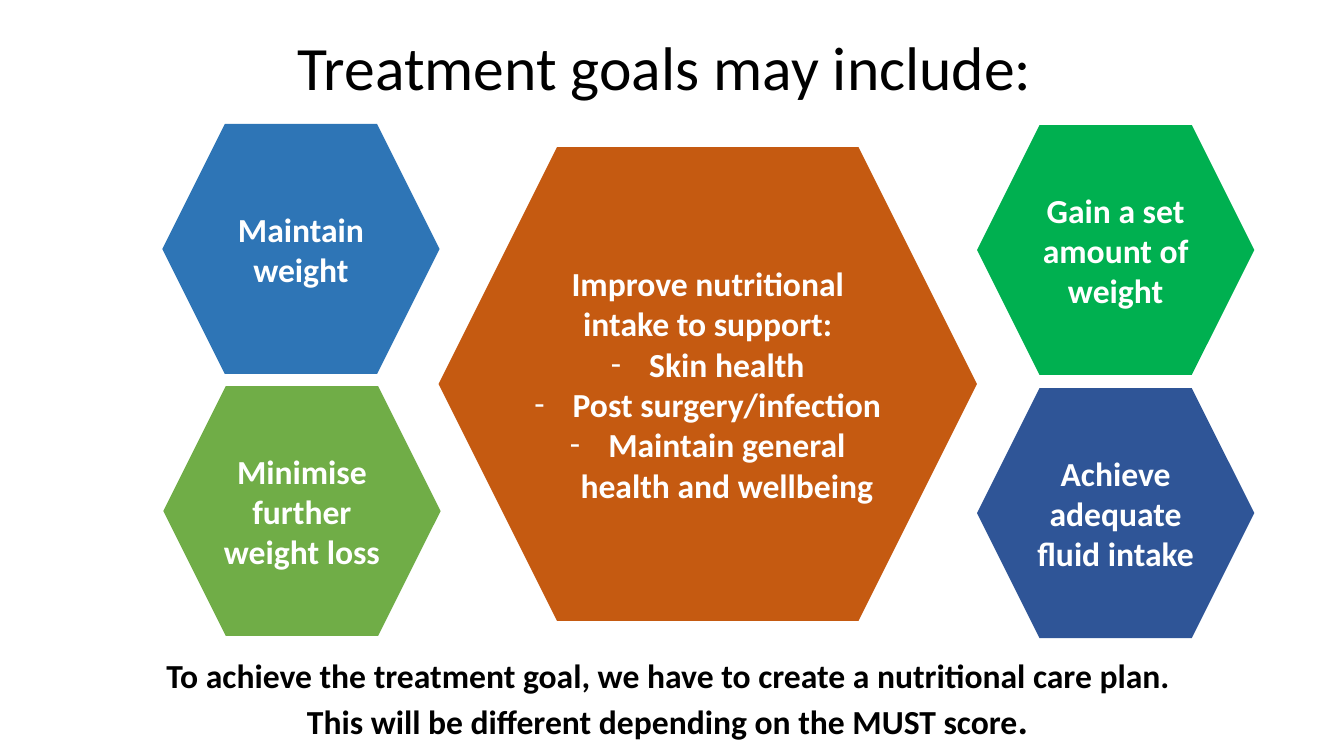
from pptx import Presentation
from pptx.dml.color import RGBColor
from pptx.enum.shapes import MSO_SHAPE
from pptx.enum.text import MSO_ANCHOR, MSO_AUTO_SIZE, PP_ALIGN
from pptx.oxml.ns import qn
from pptx.util import Inches, Pt
from lxml.etree import SubElement

BLACK = RGBColor(0x00, 0x00, 0x00)
WHITE = RGBColor(0xFF, 0xFF, 0xFF)
GREEN = RGBColor(0x00, 0xB0, 0x50)
NAVY = RGBColor(0x2F, 0x55, 0x97)
LEAF = RGBColor(0x70, 0xAD, 0x47)
ORANGE = RGBColor(0xC5, 0x5A, 0x11)
BLUE = RGBColor(0x2E, 0x75, 0xB6)


def write(paragraph, text, size=24, color=WHITE, bold=True, bullet=None):
    """Add a centred run, with a hanging bullet if one is given."""
    paragraph.alignment = PP_ALIGN.CENTER
    if bullet:
        properties = paragraph._p.get_or_add_pPr()
        properties.set("marL", str(Inches(0.38)))
        properties.set("indent", str(-Inches(0.38)))
        SubElement(properties, qn("a:buFont")).set("typeface", "Calibri")
        SubElement(properties, qn("a:buChar")).set("char", bullet)
    run = paragraph.add_run()
    run.text = text
    run.font.name = "Calibri"
    run.font.size = Pt(size)
    run.font.bold = bold
    run.font.color.rgb = color


def add_hexagon(left, top, width, height, fill):
    """Draw a hexagon and return its text frame."""
    shape = slide.shapes.add_shape(
        MSO_SHAPE.HEXAGON, Inches(left), Inches(top), Inches(width), Inches(height))
    shape.shadow.inherit = False
    shape.fill.solid()
    shape.fill.fore_color.rgb = fill
    shape.line.fill.background()
    shape.text_frame.word_wrap = True
    shape.text_frame.vertical_anchor = MSO_ANCHOR.MIDDLE
    return shape.text_frame


presentation = Presentation()
presentation.slide_width = Inches(13.33)
presentation.slide_height = Inches(7.5)
slide = presentation.slides.add_slide(presentation.slide_layouts[5])

# Title
title = slide.shapes.title
title.left, title.top = Inches(0), Inches(0.12)
title.width, title.height = Inches(13.33), Inches(1.15)
title.text_frame.vertical_anchor = MSO_ANCHOR.MIDDLE
heading = title.text_frame.paragraphs[0]
heading.line_spacing = 0.9
write(heading, "Treatment goals may include: ", size=44, color=BLACK, bold=False)

# Closing message
message = slide.shapes.add_textbox(Inches(0), Inches(6.45), Inches(13.33), Inches(0.98))
message_frame = message.text_frame
message_frame.word_wrap = True
message_frame.auto_size = MSO_AUTO_SIZE.SHAPE_TO_FIT_TEXT
write(message_frame.paragraphs[0],
      "To achieve the treatment goal, we have to create a nutritional care plan. ",
      color=BLACK)
last_line = message_frame.add_paragraph()
write(last_line, "This will be different depending on the MUST score", color=BLACK)
write(last_line, ". ", size=28, color=BLACK)

# Outer goals
outer_goals = [
    (9.69, 1.24, GREEN, "Gain a set amount of weight"),
    (9.69, 3.85, NAVY, "Achieve adequate fluid intake"),
    (1.62, 3.83, LEAF, "Minimise further weight loss"),
    (1.61, 1.23, BLUE, "Maintain weight"),
]
for left, top, fill, goal in outer_goals:
    write(add_hexagon(left, top, 2.75, 2.48, fill).paragraphs[0], goal)

# Central goal with its reasons
center_frame = add_hexagon(4.35, 1.46, 5.34, 4.7, ORANGE)
write(center_frame.paragraphs[0], "Improve nutritional intake to support:")
for reason in ("Skin health", "Post surgery/infection",
               "Maintain general health and wellbeing"):
    write(center_frame.add_paragraph(), reason, bullet="-")

presentation.save("out.pptx")
